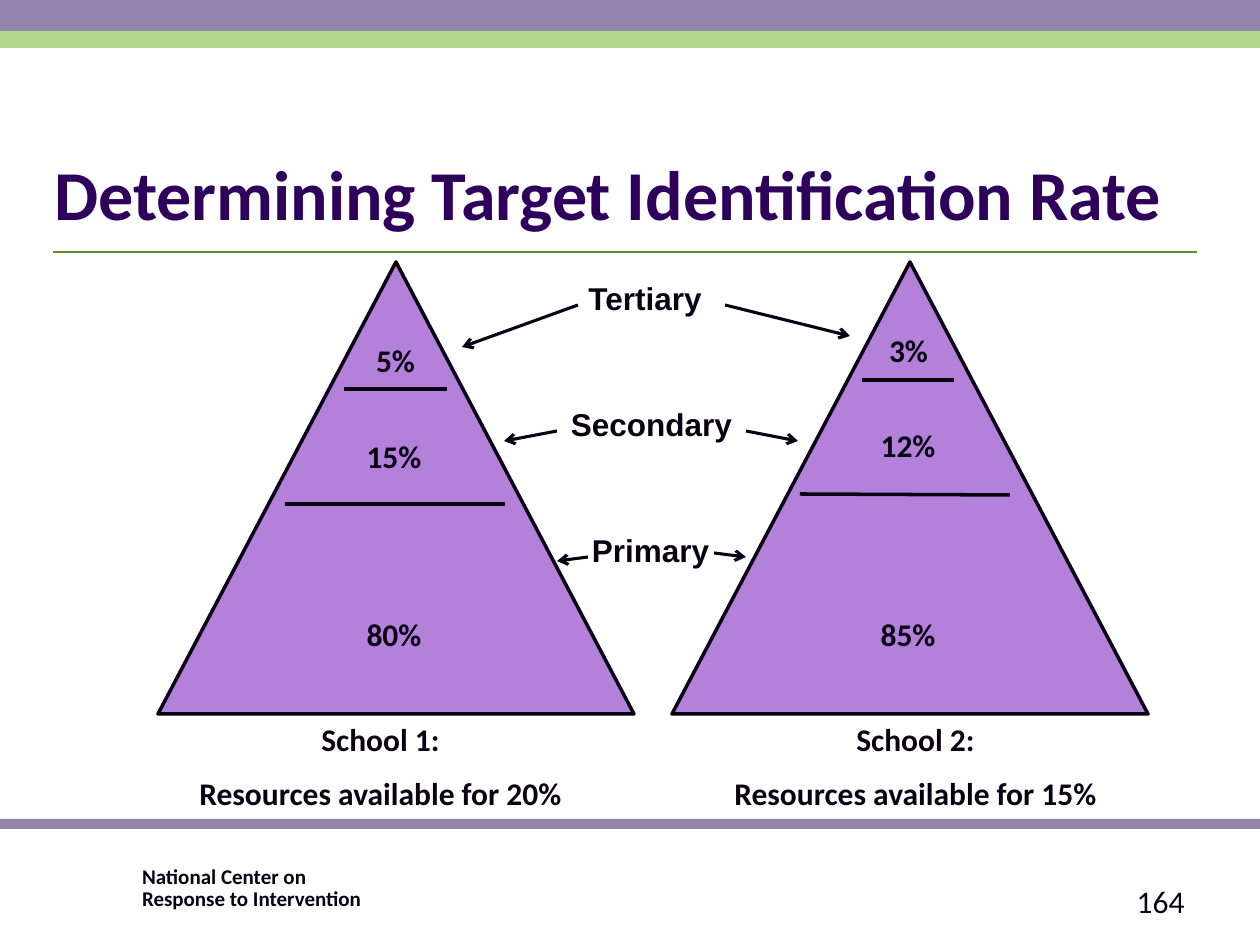
from lxml.etree import SubElement
from pptx import Presentation
from pptx.dml.color import RGBColor
from pptx.enum.shapes import MSO_CONNECTOR, MSO_SHAPE
from pptx.enum.text import MSO_ANCHOR, MSO_AUTO_SIZE, PP_ALIGN
from pptx.oxml.ns import qn
from pptx.util import Emu, Pt

SCALE = 914400 / 126  # EMU in one px
INK, TITLE, MAUVE, LILAC = "0A0014", "2E005C", "9284AC", "B381D9"
LIME, GREEN = "B4D88B", "608F2D"

# Name, share, triangle left, caption left,
# tiers (text, left, top, width), rules (x1, y1, x2, y2)
SCHOOLS = [
    ("School 1:", "20%", 158, 95,
     [("5%", 348, 335, 95), ("15%", 315, 431, 158), ("80%", 189, 609, 410)],
     [(447, 389, 344, 389), (505, 504, 285, 504)]),
    ("School 2:", "15%", 672, 630,
     [("3%", 861, 325, 95), ("12%", 829, 420, 158), ("85%", 703, 609, 410)],
     [(954, 380, 862, 380), (1010, 495, 800, 494)]),
]

# Label, box (left, top, width), left arrow, right arrow
LEVELS = [
    ("Tertiary", (535, 273, 220), (578, 305, 462, 347), (725, 305, 850, 336)),
    ("Secondary", (557, 399, 189), (557, 431, 504, 441), (746, 431, 798, 441)),
    ("Primary", (577, 525, 147), (588, 557, 557, 561), (714, 553, 746, 557)),
]


def px(*nums):
    return [Emu(round(n * SCALE)) for n in nums]


def tint(hue):
    return RGBColor.from_string(hue)


def style(par, size, hue=INK, face="Calibri", bold=True):
    font = par.font
    font.size, font.name, font.bold = Pt(size), face, bold
    font.color.rgb = tint(hue)


def block(slide, kind, box, fill, edge=None):
    shape = slide.shapes.add_shape(kind, *px(*box))
    shape.shadow.inherit = False
    shape.fill.solid()
    shape.fill.fore_color.rgb = tint(fill)
    if edge:
        shape.line.color.rgb = tint(edge)
        shape.line.width = Pt(2)
    else:
        shape.line.fill.background()


def line(slide, ends, width, hue=INK, arrow=False):
    link = slide.shapes.add_connector(MSO_CONNECTOR.STRAIGHT, *px(*ends))
    link.line.color.rgb = tint(hue)
    link.line.width = Pt(width)
    if arrow:
        SubElement(link.line._get_or_add_ln(), qn("a:tailEnd"), type="arrow")
    SubElement(link._element.spPr, qn("a:effectLst"))


def text(slide, box, lines, size=18, face="Calibri", bold=True,
         align=PP_ALIGN.CENTER, grow=True):
    frame = slide.shapes.add_textbox(*px(*box)).text_frame
    frame.word_wrap = True
    if grow:
        frame.auto_size = MSO_AUTO_SIZE.SHAPE_TO_FIT_TEXT
    for i, words in enumerate(lines):
        par = frame.add_paragraph() if i else frame.paragraphs[0]
        par.text = words
        par.alignment = align
        if i:
            par.space_before = Pt(size / 2)
        style(par, size, face=face, bold=bold)
    return frame


def title(slide, words):
    head = slide.shapes.title
    head.left, head.top, head.width, head.height = px(42, 84, 1218, 158)
    frame = head.text_frame
    frame.text = words
    frame.word_wrap = True
    frame.auto_size = MSO_AUTO_SIZE.NONE
    frame.vertical_anchor = MSO_ANCHOR.BOTTOM
    par = frame.paragraphs[0]
    par.alignment = PP_ALIGN.LEFT
    par.line_spacing = 0.9
    style(par, 40, TITLE)


def bands(slide):
    for top, high, hue in [(819, 10, MAUVE), (0, 31, MAUVE), (31, 17, LIME)]:
        block(slide, MSO_SHAPE.RECTANGLE, (0, top, 1260, high), hue)
    line(slide, (53, 252, 1197, 252), 0.75, GREEN)


def footer(slide):
    frame = text(slide, (137, 861, 408, 38),
                 ["National Center on\vResponse to Intervention"],
                 size=12, align=PP_ALIGN.LEFT, grow=False)
    frame.paragraphs[0].line_spacing = 0.9
    inset = px(5)[0]
    frame.margin_left = frame.margin_right = inset
    frame.margin_top = frame.margin_bottom = inset
    page = text(slide, (903, 876, 294, 50), ["164"], bold=False,
                align=PP_ALIGN.RIGHT, grow=False)
    page.vertical_anchor = MSO_ANCHOR.MIDDLE


def school(slide, name, share, left, cap, tiers, rules):
    block(slide, MSO_SHAPE.ISOSCELES_TRIANGLE, (left, 262, 476, 452),
          LILAC, INK)
    text(slide, (cap, 714, 571, 108),
         [name, f"Resources available for {share}"])
    for ends in rules:
        line(slide, ends, 2)
    for words, x, y, wide in tiers:
        text(slide, (x, y, wide, 50), [words])


def level(slide, words, box, *arrows):
    text(slide, (*box, 50), [words], face="Arial")
    for ends in arrows:
        line(slide, ends, 1.75, arrow=True)


def main():
    deck = Presentation()
    deck.slide_width, deck.slide_height = px(1260, 945)
    slide = deck.slides.add_slide(deck.slide_layouts[5])

    # Frame of the slide
    bands(slide)
    title(slide, "Determining Target Identification Rate")
    footer(slide)

    # Pyramids, then the labels between them
    for row in SCHOOLS:
        school(slide, *row)
    for row in LEVELS:
        level(slide, *row)

    deck.save("out.pptx")


if __name__ == "__main__":
    main()
